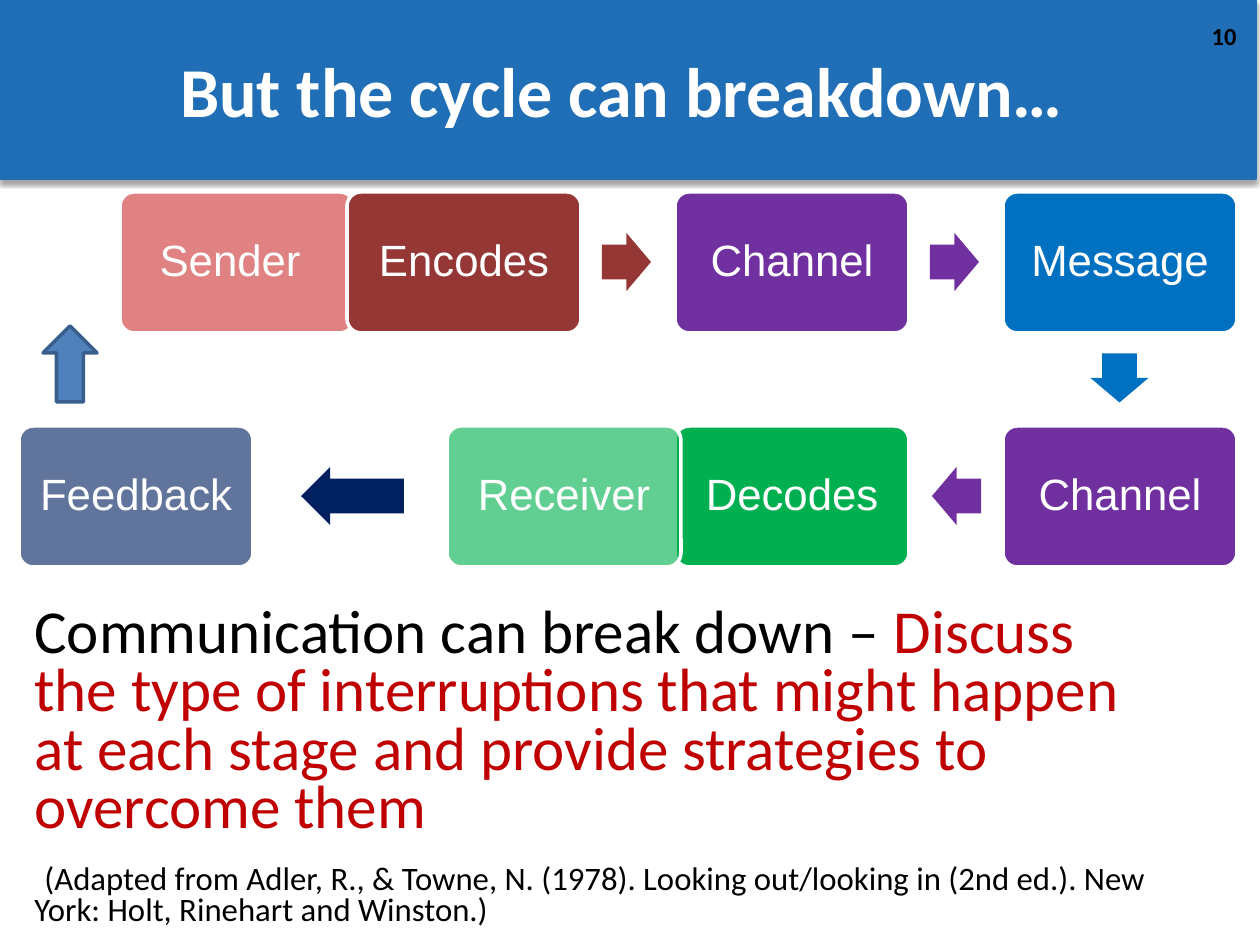
from lxml import etree
from pptx import Presentation, util as u
from pptx.dml.color import RGBColor
from pptx.enum import shapes, text
from pptx.oxml.ns import qn

PX = 914400 / 126
WHITE = RGBColor(0xFF, 0xFF, 0xFF)
BLACK = RGBColor(0, 0, 0)
BANNER = RGBColor(0x20, 0x6E, 0xB5)
RED = RGBColor(0xC0, 0, 0)
MAROON = RGBColor(0x95, 0x37, 0x35)
PURPLE = RGBColor(0x70, 0x30, 0xA0)
BLUE = RGBColor(0, 0x70, 0xC0)
GREEN = RGBColor(0, 0xB0, 0x50)
NAVY = RGBColor(0, 0x20, 0x60)
STEEL = RGBColor(0x4F, 0x81, 0xBD)
STEEL_EDGE = RGBColor(0x3A, 0x5F, 0x8C)
CENTER = text.PP_ALIGN.CENTER
MIDDLE = text.MSO_ANCHOR.MIDDLE


def write(paragraph, words, size=25, font="Calibri", color=WHITE, bold=False,
          align=None, spacing=None):
    if align is not None:
        paragraph.alignment = align
    if spacing is not None:
        paragraph.line_spacing = spacing
    run = paragraph.add_run()
    run.text = words
    run.font.size = u.Pt(size)
    run.font.name = font
    run.font.color.rgb = color
    run.font.bold = bold


def add_block(kind, box, fill, line=None, line_width=2, alpha=None):
    """Add a filled preset shape; box is in px, alpha in percent."""
    shape = slide.shapes.add_shape(kind, *(round(n * PX) for n in box))
    shape.shadow.inherit = False
    shape.fill.solid()
    shape.fill.fore_color.rgb = fill
    if alpha is not None:
        color = shape._element.spPr.find(qn("a:solidFill"))[0]
        etree.SubElement(color, qn("a:alpha"), val=str(alpha * 1000))
    if line is None:
        shape.line.fill.background()
    else:
        shape.line.color.rgb = line
        shape.line.width = u.Pt(line_width)
    return shape


presentation = Presentation()
presentation.slide_width = u.Inches(10)
presentation.slide_height = u.Inches(7.5)
slide = presentation.slides.add_slide(presentation.slide_layouts[6])

# Banner with a soft shadow below it
banner = add_block(shapes.MSO_SHAPE.RECTANGLE, (0, 0, 1256, 179), BANNER, BANNER, 0.75)
effects = banner._element.spPr.find(qn("a:effectLst"))
shadow = etree.SubElement(effects, qn("a:outerShdw"), blurRad=str(u.Pt(3.1)),
                          dist=str(u.Pt(1.8)), dir="5400000", rotWithShape="0")
shadow_color = etree.SubElement(shadow, qn("a:srgbClr"), val="000000")
etree.SubElement(shadow_color, qn("a:alpha"), val="35000")

# Text boxes: slide number, title, discussion prompt
frames = []
for box in ((1197, 15, 52, 50), (-6, 0, 1255, 179), (18, 600, 1142, 345)):
    frame = slide.shapes.add_textbox(*(round(n * PX) for n in box)).text_frame
    frame.word_wrap = True
    frames.append(frame)
number, title, prompt = frames

write(number.paragraphs[0], "10", size=14, color=BLACK, bold=True,
      align=text.PP_ALIGN.RIGHT)
title.vertical_anchor = MIDDLE
write(title.paragraphs[0], "But the cycle can breakdown…", size=40, bold=True, align=CENTER)

question = prompt.paragraphs[0]
write(question, "Communication can break down – ", size=34.9, color=BLACK, spacing=0.8)
write(question, "Discuss the type of interruptions that might happen at each stage "
      "and provide strategies to overcome them", size=34.9, color=RED)
citation = prompt.add_paragraph()
citation.space_before = u.Pt(14)
write(citation, "(Adapted from Adler, R., & Towne, N. (1978). Looking out/looking in "
      "(2nd ed.). New York: Holt, Rinehart and Winston.)", size=18.7, color=BLACK, spacing=0.8)
for paragraph, indent in ((question, 0), (citation, 10)):
    properties = paragraph._p.get_or_add_pPr()
    properties.set("marL", str(round(4 * PX)))
    properties.set("indent", str(round(indent * PX)))

# Communication cycle: label, left, top, colour, opacity, extra right inset
TOP_ROW, BOTTOM_ROW = 192, 426
STAGES = [
    ("Sender", 120, TOP_ROW, RED, 49, 14),
    ("Encodes", 347, TOP_ROW, MAROON, None, 0),
    ("Channel", 675, TOP_ROW, PURPLE, None, 0),
    ("Message", 1003, TOP_ROW, BLUE, None, 0),
    ("Channel", 1003, BOTTOM_ROW, PURPLE, None, 0),
    ("Decodes", 675, BOTTOM_ROW, GREEN, None, 0),
    ("Receiver", 447, BOTTOM_ROW, GREEN, 62, 0),
    ("Feedback", 19, BOTTOM_ROW, NAVY, 62, 0),
]
for label, left, top, color, alpha, extra in STAGES:
    stage = add_block(shapes.MSO_SHAPE.ROUNDED_RECTANGLE, (left, top, 234, 141),
                      color, WHITE, alpha=alpha)
    stage.adjustments[0] = 0.1
    frame = stage.text_frame
    frame.word_wrap = True
    frame.vertical_anchor = MIDDLE
    frame.margin_left = round(13 * PX)
    frame.margin_right = round((13 + extra) * PX)
    write(frame.paragraphs[0], label, font="Arial", align=CENTER, spacing=0.9)

# Arrows: left, top, length, rotation, colour
ARROWS = [
    (602, 233, 49, 0, MAROON),
    (930, 233, 49, 0, PURPLE),
    (1095, 349, 49, 90, BLUE),
    (932, 467, 49, 180, PURPLE),
    (301, 467, 103, 180, NAVY),
]
for left, top, length, rotation, color in ARROWS:
    arrow = add_block(shapes.MSO_SHAPE.RIGHT_ARROW, (left, top, length, 58), color)
    arrow.adjustments[0] = 0.6
    arrow.rotation = rotation

add_block(shapes.MSO_SHAPE.UP_ARROW, (43, 326, 54, 76), STEEL, STEEL_EDGE)

presentation.save("out.pptx")
